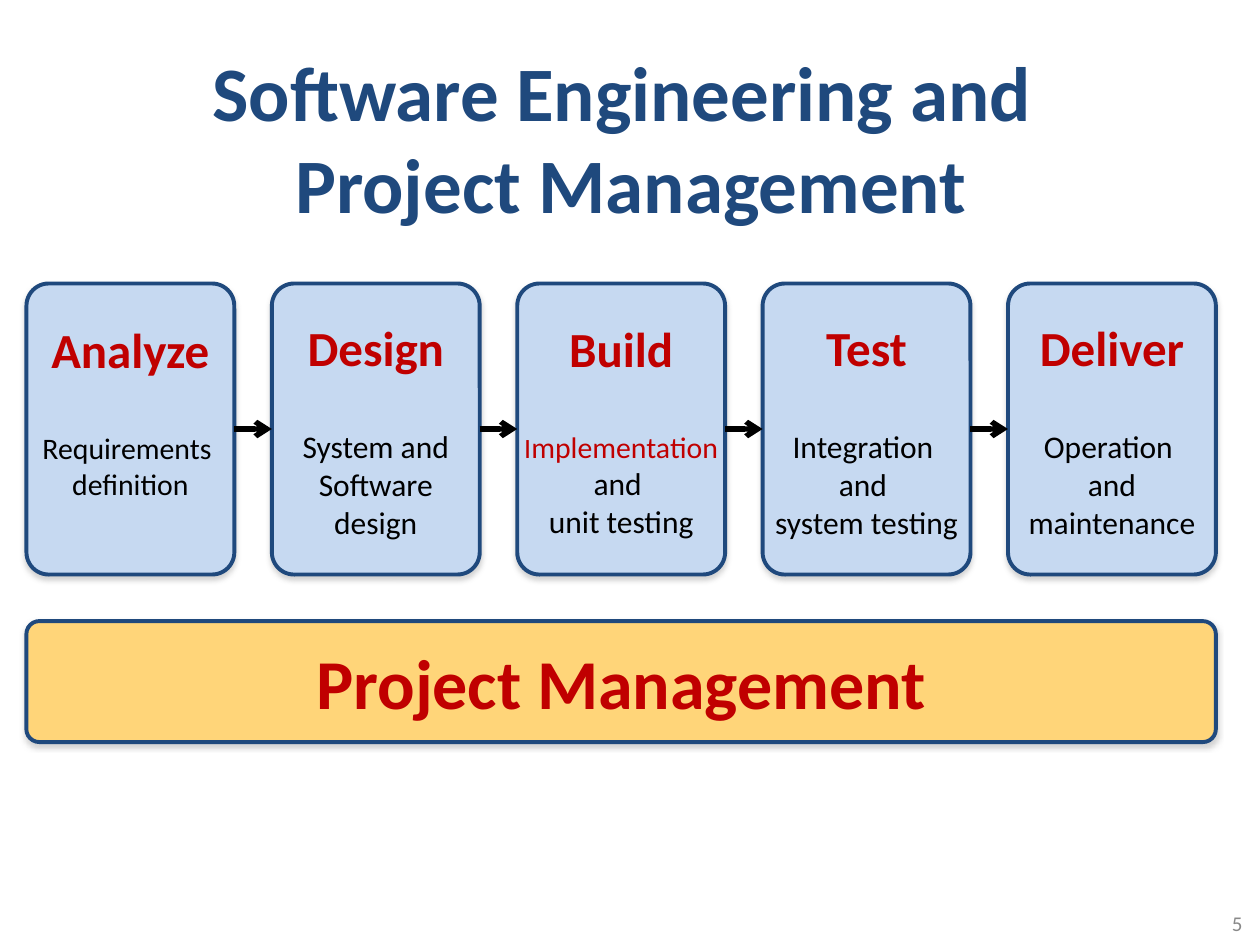
from dataclasses import dataclass

import pptx
import pptx.dml.color
import pptx.enum.shapes
import pptx.enum.text
import pptx.oxml
import pptx.oxml.ns
import pptx.util
from pptx.util import Inches

FONT = "Calibri"
NAVY, RED, BLACK, GREY = "1F497D", "C00000", "000000", "898989"
PALE_BLUE, AMBER = "C6D9F1", "FFD579"
CENTER = pptx.enum.text.PP_ALIGN.CENTER
RIGHT = pptx.enum.text.PP_ALIGN.RIGHT


@dataclass
class Span:
    text: str
    size: float
    color: str = BLACK
    bold: bool = False


@dataclass
class Stage:
    name: str
    details: list[list[Span]]  # one list of spans per paragraph
    bottom_inset: float = 0


def rgb(color: str) -> pptx.dml.color.RGBColor:
    return pptx.dml.color.RGBColor.from_string(color)


def add_spans(para, spans: list[Span], align=CENTER) -> None:
    para.alignment = align
    for span in spans:
        for number, line in enumerate(span.text.split("\n")):
            if number:
                para.add_line_break()
            run = para.add_run()
            run.text = line
            run.font.name = FONT
            run.font.size = pptx.util.Pt(span.size)
            run.font.bold = span.bold
            run.font.color.rgb = rgb(span.color)


def prepare_frame(shape):
    frame = shape.text_frame
    frame.word_wrap = True
    frame.vertical_anchor = pptx.enum.text.MSO_ANCHOR.MIDDLE
    return frame


def add_label(page, left: float, top: float, width: float, height: float,
              span: Span, align=CENTER) -> None:
    box = page.shapes.add_textbox(Inches(left), Inches(top), Inches(width), Inches(height))
    add_spans(prepare_frame(box).paragraphs[0], [span], align)


def add_panel(page, left: float, top: float, width: float, height: float, fill: str):
    panel = page.shapes.add_shape(
        pptx.enum.shapes.MSO_SHAPE.ROUNDED_RECTANGLE,
        Inches(left), Inches(top), Inches(width), Inches(height))
    panel.adjustments[0] = 0.107
    panel.fill.solid()
    panel.fill.fore_color.rgb = rgb(fill)
    panel.line.color.rgb = rgb(NAVY)
    panel.line.width = pptx.util.Pt(2.25)
    # Soft shadow straight below
    panel.shadow.inherit = False
    effects = panel._element.spPr.find(pptx.oxml.ns.qn("a:effectLst"))
    effects.append(pptx.oxml.parse_xml(
        f'<a:outerShdw {pptx.oxml.ns.nsdecls("a")} blurRad="40000" dist="23000" '
        'dir="5400000" rotWithShape="0"><a:srgbClr val="808080">'
        '<a:alpha val="35000"/></a:srgbClr></a:outerShdw>'))
    frame = prepare_frame(panel)
    frame.margin_left = frame.margin_right = frame.margin_top = frame.margin_bottom = 0
    return panel


def add_stage(page, stage: Stage, left: float):
    panel = add_panel(page, left, STAGE_TOP, STAGE_WIDTH, STAGE_HEIGHT, PALE_BLUE)
    frame = panel.text_frame
    frame.margin_bottom = Inches(stage.bottom_inset)
    heading = frame.paragraphs[0]
    add_spans(heading, [Span(stage.name, 28, RED, True)])
    heading.space_after = pptx.util.Pt(29.3)
    for spans in stage.details:
        add_spans(frame.add_paragraph(), spans)
    return panel


def add_arrow(page, source, target) -> None:
    arrow = page.shapes.add_connector(
        pptx.enum.shapes.MSO_CONNECTOR.STRAIGHT, 0, 0, 0, 0)
    arrow.begin_connect(source, 3)
    arrow.end_connect(target, 1)
    arrow.line.color.rgb = rgb(BLACK)
    arrow.line.width = pptx.util.Pt(3)
    namespace = pptx.oxml.ns.nsdecls("a")
    arrow.line._get_or_add_ln().append(
        pptx.oxml.parse_xml(f'<a:tailEnd {namespace} type="arrow"/>'))
    arrow._element.spPr.append(pptx.oxml.parse_xml(f"<a:effectLst {namespace}/>"))


LEFT, FULL_WIDTH = 0.21, 9.44
STAGE_TOP, STAGE_WIDTH, STAGE_HEIGHT = 2.25, 1.65, 2.31
STAGES = [
    Stage("Analyze", [[Span("Requirements \ndefinition", 17)]], bottom_inset=0.29),
    Stage("Design", [[Span("System and Software design", 18)]]),
    Stage("Build", [
        [Span("I", 16, RED), Span("mplementation", 17, RED), Span(" ", 16, RED),
         Span("and ", 18)],
        [Span("unit testing", 18)],
    ]),
    Stage("Test", [[Span("Integration \nand \nsystem testing", 18)]]),
    Stage("Deliver", [[Span("Operation \nand maintenance", 18)]]),
]


def main() -> None:
    deck = pptx.Presentation()
    deck.slide_width, deck.slide_height = Inches(10), Inches(7.5)
    page = deck.slides.add_slide(deck.slide_layouts[6])

    # Title and page number
    add_label(page, 0.51, 0.36, 9, 1.45,
              Span("Software Engineering and \nProject Management", 44, NAVY, True))
    add_label(page, 7.63, 7.13, 2.33, 0.4, Span("5", 12, GREY), RIGHT)

    # Stages, evenly spread over the full width
    pitch = (FULL_WIDTH - STAGE_WIDTH) / (len(STAGES) - 1)
    panels = [add_stage(page, stage, LEFT + index * pitch)
              for index, stage in enumerate(STAGES)]

    # Arrows from each stage to the next
    for source, target in zip(panels, panels[1:]):
        add_arrow(page, source, target)

    # Bar under all stages
    bar = add_panel(page, LEFT, 4.93, FULL_WIDTH, 0.96, AMBER)
    add_spans(bar.text_frame.paragraphs[0], [Span("Project Management", 40, RED, True)])

    deck.save("out.pptx")


if __name__ == "__main__":
    main()
